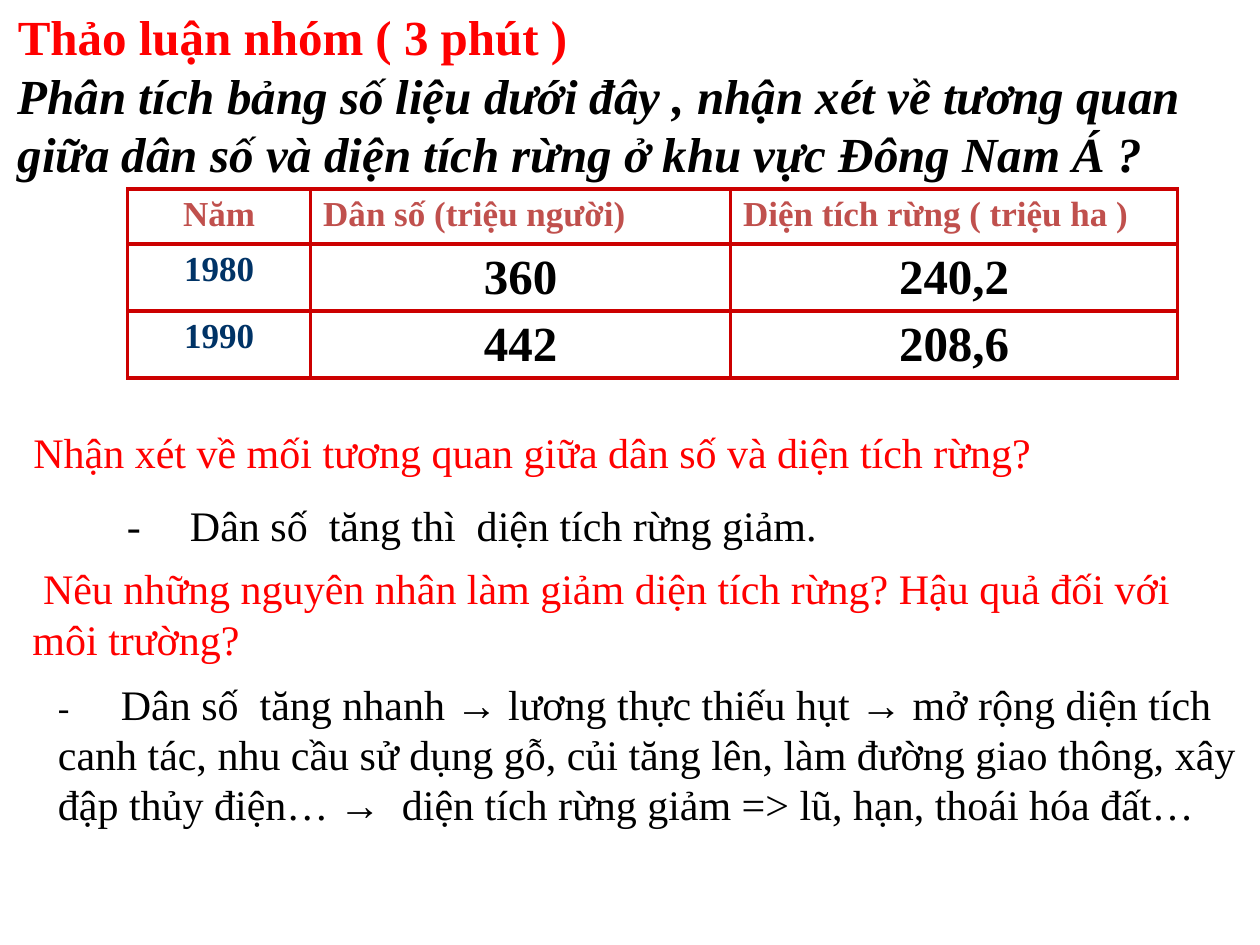
from lxml import etree
from pptx import Presentation
from pptx import util as u
from pptx.dml import color
from pptx.enum import text
from pptx.oxml import ns

FONT = "Times New Roman"
RED, BLACK, NAVY, BRICK, BORDER = "FF0000", "000000", "003366", "C0504D", "CC0000"
LEFT, CENTER = text.PP_ALIGN.LEFT, text.PP_ALIGN.CENTER


def paint(hex_code):
    """Turn a hex string into a colour."""
    return color.RGBColor.from_string(hex_code)


def write(para, words, size=24, ink=BLACK, bold=False, italic=False, align=LEFT):
    """Add one formatted span to a paragraph."""
    para.alignment = align
    span = para.add_run()
    span.text = words
    font = span.font
    font.name, font.size, font.bold, font.italic = FONT, u.Pt(size), bold, italic
    font.color.rgb = paint(ink)


def set_indent(para, first_line=0, tab=None):
    """Set the first-line indent and an optional tab stop."""
    properties = para._p.get_or_add_pPr()
    properties.set("marL", "0")
    properties.set("indent", str(u.Pt(first_line)))
    if tab:
        stops = etree.SubElement(properties, ns.qn("a:tabLst"))
        etree.SubElement(stops, ns.qn("a:tab"), pos=str(u.Pt(tab)), algn="l")


def add_heading(page, box, task, question):
    """Place the task and its question in the title placeholder."""
    title = page.shapes.title
    title.left, title.top, title.width, title.height = map(u.Pt, box)
    frame = title.text_frame
    frame.word_wrap = True
    frame.auto_size = text.MSO_AUTO_SIZE.NONE
    frame.vertical_anchor = text.MSO_ANCHOR.TOP
    write(frame.paragraphs[0], task, size=28, ink=RED, bold=True)
    write(frame.add_paragraph(), question, size=28, bold=True, italic=True)


def add_note(page, box, spans, first_line=0, tab=None):
    """Place one paragraph made of (words, format) spans."""
    frame = page.shapes.add_textbox(*map(u.Pt, box)).text_frame
    frame.word_wrap = True
    para = frame.paragraphs[0]
    for words, look in spans:
        write(para, words, **look)
    set_indent(para, first_line, tab)


def frame_cell(cell):
    """Draw the four borders of a cell and clear its fill."""
    properties = cell._tc.get_or_add_tcPr()
    for side in ("lnL", "lnR", "lnT", "lnB"):
        line = etree.SubElement(properties, ns.qn(f"a:{side}"), w=str(u.Pt(2.25)))
        fill = etree.SubElement(line, ns.qn("a:solidFill"))
        etree.SubElement(fill, ns.qn("a:srgbClr"), val=BORDER)
    cell.fill.background()


def add_figures(page, box, widths, heights, rows):
    """Place the table of population and forest area by year."""
    table = page.shapes.add_table(len(rows), len(widths), *map(u.Pt, box)).table
    for column, width in zip(table.columns, widths):
        column.width = u.Pt(width)
    for row, height in zip(table.rows, heights):
        row.height = u.Pt(height)
    for r, values in enumerate(rows):
        for c, value in enumerate(values):
            cell = table.cell(r, c)
            frame_cell(cell)
            write(cell.text_frame.paragraphs[0], value, bold=True,
                  size=28 if r and c else 20,
                  ink=BRICK if r == 0 else BLACK if c else NAVY,
                  align=LEFT if r == 0 and c else CENTER)


def main():
    """Build and save the slide."""
    deck = Presentation()
    deck.slide_width, deck.slide_height = u.Pt(720), u.Pt(540)
    page = deck.slides.add_slide(deck.slide_layouts[5])
    add_heading(page, (3, 0, 717, 109), "Thảo luận nhóm ( 3 phút )",
                "Phân tích bảng số liệu dưới đây , nhận xét về tương quan "
                "giữa dân số và diện tích rừng ở khu vực Đông Nam Á ?")
    add_figures(page, (73, 108, 600, 108), (104.5, 240, 255.5), (31.5, 38.25, 38.25), [
        ("Năm", "Dân số (triệu người)", "Diện tích rừng ( triệu ha )"),
        ("1980", "360", "240,2"),
        ("1990", "442", "208,6"),
    ])
    add_note(page, (12, 240, 708, 36), [
        ("Nhận xét về mối tương quan giữa dân số và diện tích rừng?", {"ink": RED})])
    add_note(page, (65.5, 282, 504, 36), [
        ("-\tDân số  tăng thì  diện tích rừng giảm.", {})], tab=26)
    add_note(page, (11.5, 318, 690, 65.5), [
        ("Nêu những nguyên nhân làm giảm diện tích rừng? "
         "Hậu quả đối với môi trường?", {"ink": RED})], first_line=6)
    add_note(page, (26, 384, 694, 94.5), [
        ("-\t", {"size": 20}),
        ("Dân số  tăng nhanh → lương thực thiếu hụt → mở rộng diện tích canh tác, "
         "nhu cầu sử dụng gỗ, củi tăng lên, làm đường giao thông, xây đập thủy điện… "
         "→  diện tích rừng giảm => lũ, hạn, thoái hóa đất…", {})], tab=21.5)
    deck.save("out.pptx")


if __name__ == "__main__":
    main()
